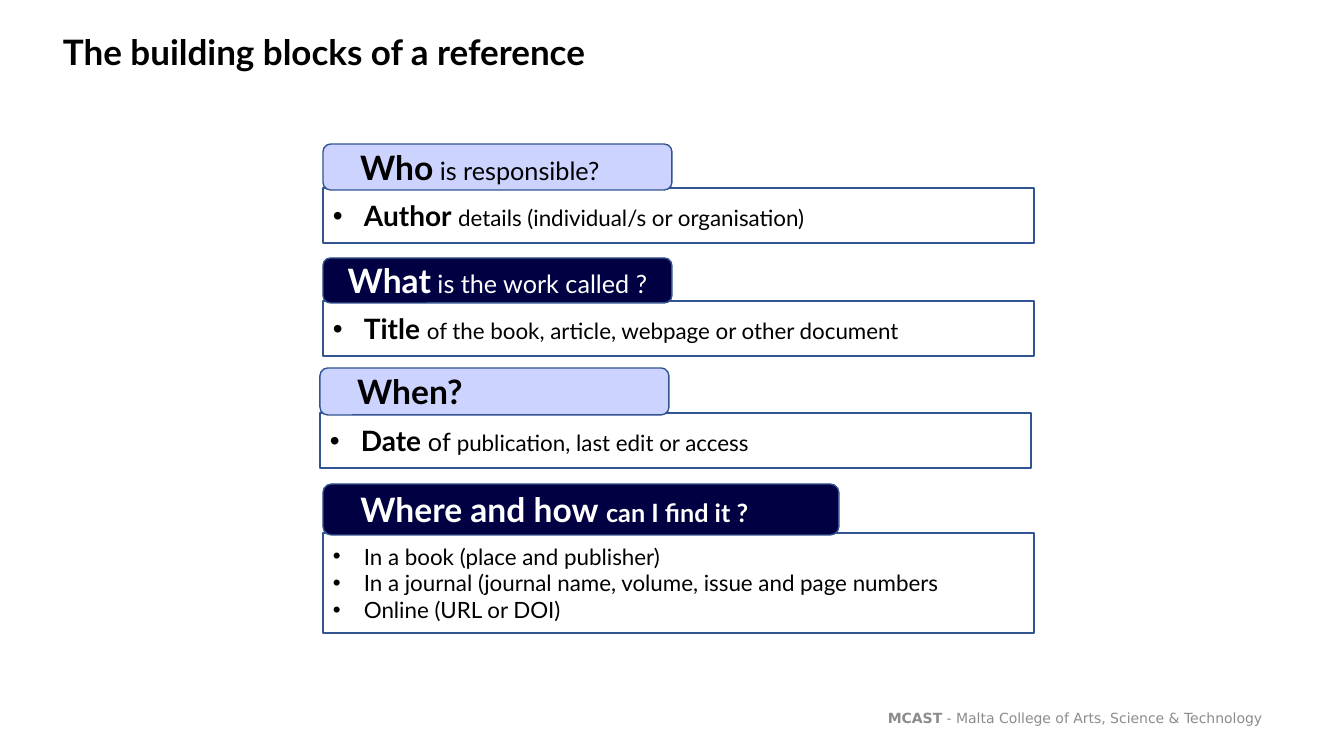
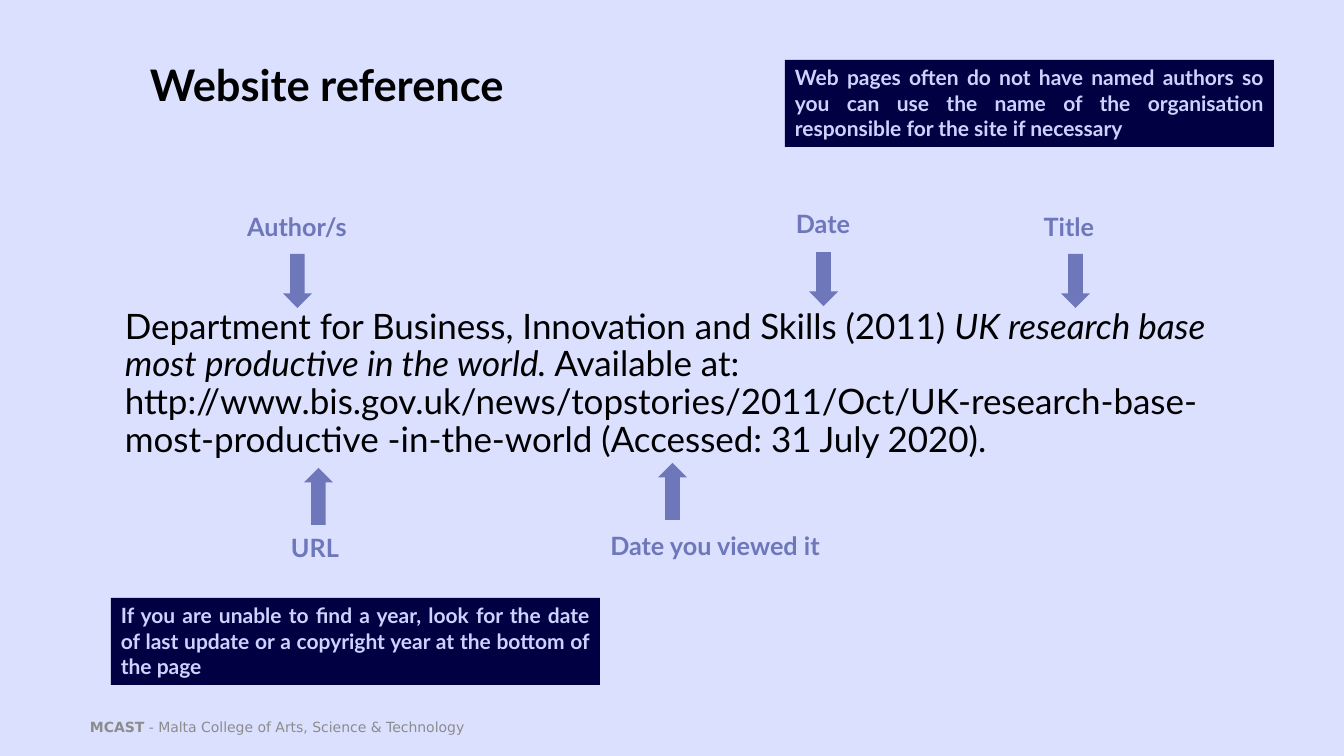
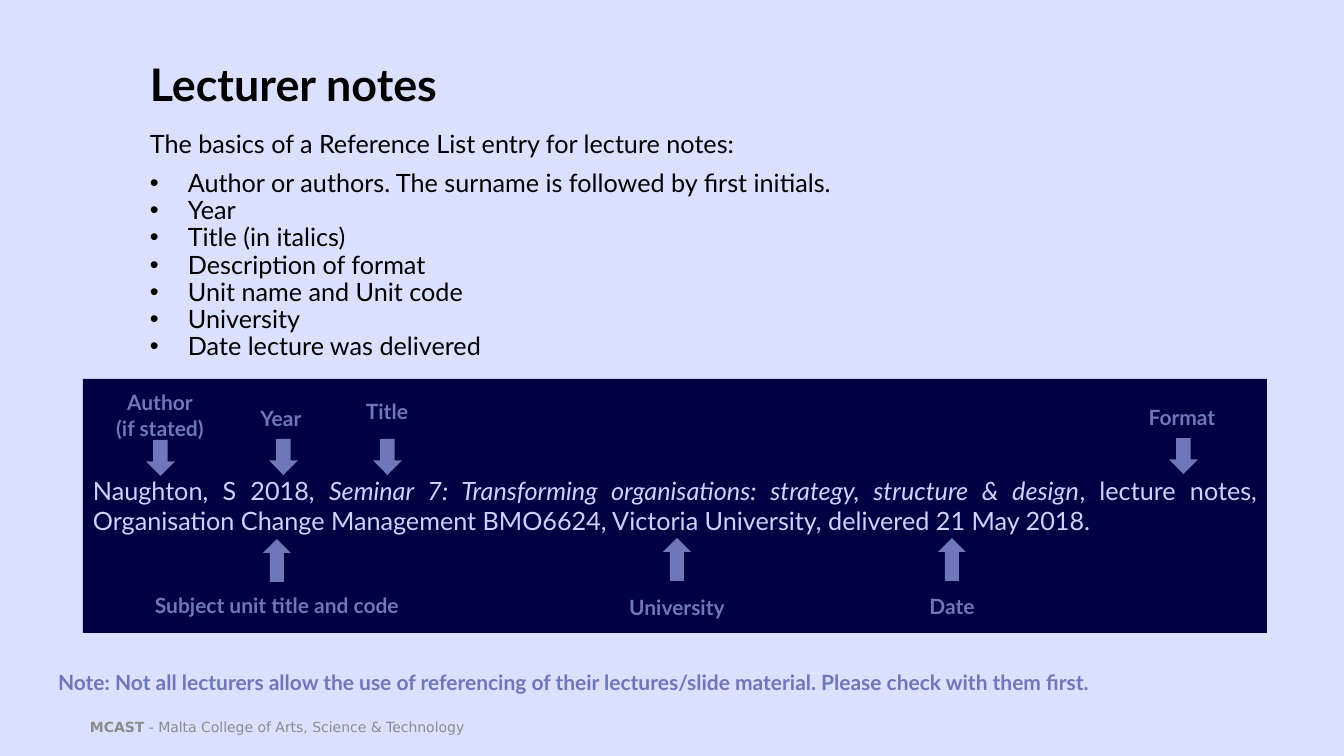
"""Build three slides on how to write references."""
import pptx
import pptx.dml.color
import pptx.enum.shapes
import pptx.enum.text
import pptx.oxml.ns
import pptx.util
from lxml import etree

W, H = 1344, 756
SCALE = 12192000 / W
FONT = "Lato"
COLORS = {
    "black": "000000",
    "white": "FFFFFF",
    "navy": "000043",
    "lilac": "CDD3FF",
    "violet": "6E77B9",
    "outline": "325491",
    "grey": "8C8C8C",
}
ALIGN = pptx.enum.text.PP_ALIGN
ANCHOR = pptx.enum.text.MSO_ANCHOR
SHAPE = pptx.enum.shapes.MSO_SHAPE


def px(n):
    return pptx.util.Emu(round(n * SCALE))


def box(*at):
    return [px(n) for n in at]


def rgb(name):
    return pptx.dml.color.RGBColor.from_string(COLORS[name])


def sub(parent, tag, **attrs):
    return etree.SubElement(parent, pptx.oxml.ns.qn(tag), attrs)


def add_shape(s, kind, at, fill, line=None):
    sp = s.shapes.add_shape(kind, *box(*at))
    sp.shadow.inherit = False
    sp.fill.solid()
    sp.fill.fore_color.rgb = rgb(fill)
    if line:
        sp.line.color.rgb = rgb(line)
        sp.line.width = pptx.util.Pt(1)
    else:
        sp.line.fill.background()
    return sp


def write(sp, paras, color="black", align=ALIGN.LEFT, anchor=ANCHOR.MIDDLE,
          font=FONT, spacing=None, bullet=0, indent=0):
    tf = sp.text_frame
    tf.word_wrap = True
    tf.vertical_anchor = anchor
    for i, runs in enumerate(paras):
        p = tf.paragraphs[0] if i == 0 else tf.add_paragraph()
        p.alignment = align
        if bullet or indent:
            pPr = p._p.get_or_add_pPr()
            pPr.set("marL", str(px(bullet or indent)))
            if bullet:
                pPr.set("indent", str(-px(bullet)))
                sub(pPr, "a:buFont", typeface="Arial")
                sub(pPr, "a:buChar", char="•")
        if spacing:
            p.line_spacing = spacing
        for text, size, style in runs:
            if text == "\n":
                p.add_line_break()
                continue
            r = p.add_run()
            r.text = text
            r.font.name = font
            r.font.size = pptx.util.Pt(size)
            r.font.bold = "b" in style
            r.font.italic = "i" in style
            r.font.color.rgb = rgb(color)
    return tf


def add_text(s, at, paras, **style):
    return write(s.shapes.add_textbox(*box(*at)), paras, **style)


def add_title(s, text, size, at=(140, 54, 768, 66)):
    add_text(s, at, [[(text, size, "b")]], spacing=0.9)


def add_footer(s, x=80, y=718, align=ALIGN.LEFT):
    runs = [("MCAST", 10, "b"),
            (" - Malta College of Arts, Science & Technology", 10, "")]
    tf = add_text(s, (x, y, 428, 17), [runs], color="grey", align=align,
                  font="DejaVu Sans")
    tf.margin_top = tf.margin_bottom = 0


def add_tint(s):
    sp = add_shape(s, SHAPE.RECTANGLE, (0, 0, W, H), "lilac")
    color = sp.fill._xPr.find(".//" + pptx.oxml.ns.qn("a:srgbClr"))
    sub(color, "a:alpha", val="70000")


def add_card(s, x, y, tab_w, tab_h, body_h, dark, tab, body, centred=False):
    sp = add_shape(s, SHAPE.RECTANGLE, (x, y + tab_h - 2, 711, body_h),
                   "white", "outline")
    write(sp, body, bullet=31)
    sp = add_shape(s, SHAPE.ROUNDED_RECTANGLE, (x, y, tab_w, tab_h),
                   "navy" if dark else "lilac", "outline")
    write(sp, [tab], color="white" if dark else "black",
          align=ALIGN.CENTER if centred else ALIGN.LEFT,
          indent=0 if centred else 25)


def add_note(s, x, y, text):
    sp = add_shape(s, SHAPE.RECTANGLE, (x, y, 489, 87), "navy")
    write(sp, [[(text, 15, "b")]], color="lilac", align=ALIGN.JUSTIFY,
          anchor=ANCHOR.TOP)


def add_label(s, lines, cx, y, size, w=280):
    h = 5 + len(lines) * size * 2
    add_text(s, (cx - w // 2, y, w, h), [[(t, size, "b")] for t in lines],
             color="violet", align=ALIGN.CENTER, anchor=ANCHOR.TOP)


def add_pointers(s, kind, arrow_w, arrow_h, size, pointers):
    for lines, label_cx, label_y, arrow_cx, arrow_y in pointers:
        add_shape(s, kind, (arrow_cx - arrow_w // 2, arrow_y, arrow_w, arrow_h),
                  "violet")
        add_label(s, lines, label_cx, label_y, size)


def building_blocks(s):
    add_title(s, "The building blocks of a reference", 25, (53, 13, 1251, 83))
    add_footer(s, 861, 709, ALIGN.CENTER)
    add_card(s, 323, 144, 349, 46, 55, False,
             [("Who", 24, "b"), (" is responsible?", 18, "")],
             [[("Author", 20, "b"), (" ", 18, ""),
               ("details (individual/s or organisation)", 16, "")]])
    add_card(s, 323, 258, 349, 45, 55, True,
             [("What", 24, "b"), (" is the work called ?", 18, "")],
             [[("Title ", 20, "b"),
               ("of the book, article, webpage or other document", 16, "")]],
             centred=True)
    add_card(s, 320, 368, 349, 47, 55, False,
             [("When?", 24, "b")],
             [[("Date ", 20, "b"), ("of ", 18, ""),
               ("publication, last edit or access", 16, "")]])
    places = ["In a book (place and publisher)",
              "In a journal (journal name, volume, issue and page numbers",
              "Online (URL or DOI)"]
    add_card(s, 323, 484, 516, 51, 100, True,
             [("Where and how ", 24, "b"), ("can I find it ?", 18, "b")],
             [[(t, 16, "")] for t in places])


def website_reference(s):
    add_tint(s)
    reference = [
        ("Department for Business, Innovation and Skills (2011) ", 25, ""),
        ("UK research base most productive in the world.", 25, "i"),
        (" Available at:", 25, ""),
        ("\n", 25, ""),
        ("http://www.bis.gov.uk/news/topstories/2011/Oct/UK-research-base-"
         "most-productive -in-the-world (Accessed: 31 July 2020).", 25, ""),
    ]
    add_text(s, (115, 280, 1160, 209), [reference], spacing=0.9)
    add_footer(s)
    add_title(s, "Website reference", 31)
    add_pointers(s, SHAPE.DOWN_ARROW, 29, 54, 18, [
        (["Author/s"], 297, 206, 297, 254),
        (["Date"], 823, 203, 823, 252),
        (["Title"], 1069, 206, 1075, 254),
    ])
    add_pointers(s, SHAPE.UP_ARROW, 29, 57, 18, [
        (["URL"], 315, 527, 318, 468),
        (["Date you viewed it"], 715, 525, 672, 463),
    ])
    add_note(s, 111, 598, "If you are unable to find a year, look for the date "
             "of last update or a copyright year at the bottom of the page")
    add_note(s, 785, 60, "Web pages often do not have named authors so you can "
             "use the name of the organisation responsible for the site "
             "if necessary")


def lecturer_notes(s):
    add_tint(s)
    sp = add_shape(s, SHAPE.RECTANGLE, (83, 379, 1184, 254), "navy")
    tf = write(sp, [[
        ("Naughton, S 2018, ", 18, ""),
        ("Seminar 7: Transforming organisations: strategy, structure & design",
         18, "i"),
        (", lecture notes, Organisation Change Management BMO6624, "
         "Victoria University, delivered 21 May 2018.", 18, ""),
    ]], color="lilac", align=ALIGN.JUSTIFY, anchor=ANCHOR.TOP)
    tf.margin_top = px(96)
    add_footer(s)
    add_title(s, "Lecturer notes", 32)
    add_text(s, (140, 126, 1133, 38),
             [[("The basics of a Reference List entry for lecture notes:", 18, "")]],
             spacing=0.9)
    parts = ["Author or authors. The surname is followed by first initials.",
             "Year", "Title (in italics)", "Description of format",
             "Unit name and Unit code", "University",
             "Date lecture was delivered"]
    add_text(s, (140, 166, 1133, 200), [[(t, 18, "")] for t in parts],
             spacing=0.9, bullet=38)
    add_pointers(s, SHAPE.DOWN_ARROW, 29, 36, 15, [
        (["Author", "(if stated)"], 160, 385, 160, 440),
        (["Year"], 281, 401, 283, 439),
        (["Title"], 387, 394, 387, 439),
        (["Format"], 1182, 400, 1183, 438),
    ])
    add_pointers(s, SHAPE.UP_ARROW, 28, 43, 15, [
        (["Subject unit title and code"], 277, 588, 277, 539),
        (["University"], 677, 590, 677, 538),
        (["Date"], 952, 589, 952, 538),
    ])
    add_label(s, ["Note: Not all lecturers allow the use of referencing of their "
                  "lectures/slide material. Please check with them first."],
              574, 665, 15, w=1100)


def main():
    prs = pptx.Presentation()
    prs.slide_width, prs.slide_height = px(W), px(H)
    for build in (building_blocks, website_reference, lecturer_notes):
        build(prs.slides.add_slide(prs.slide_layouts[6]))
    prs.save("out.pptx")


if __name__ == "__main__":
    main()
